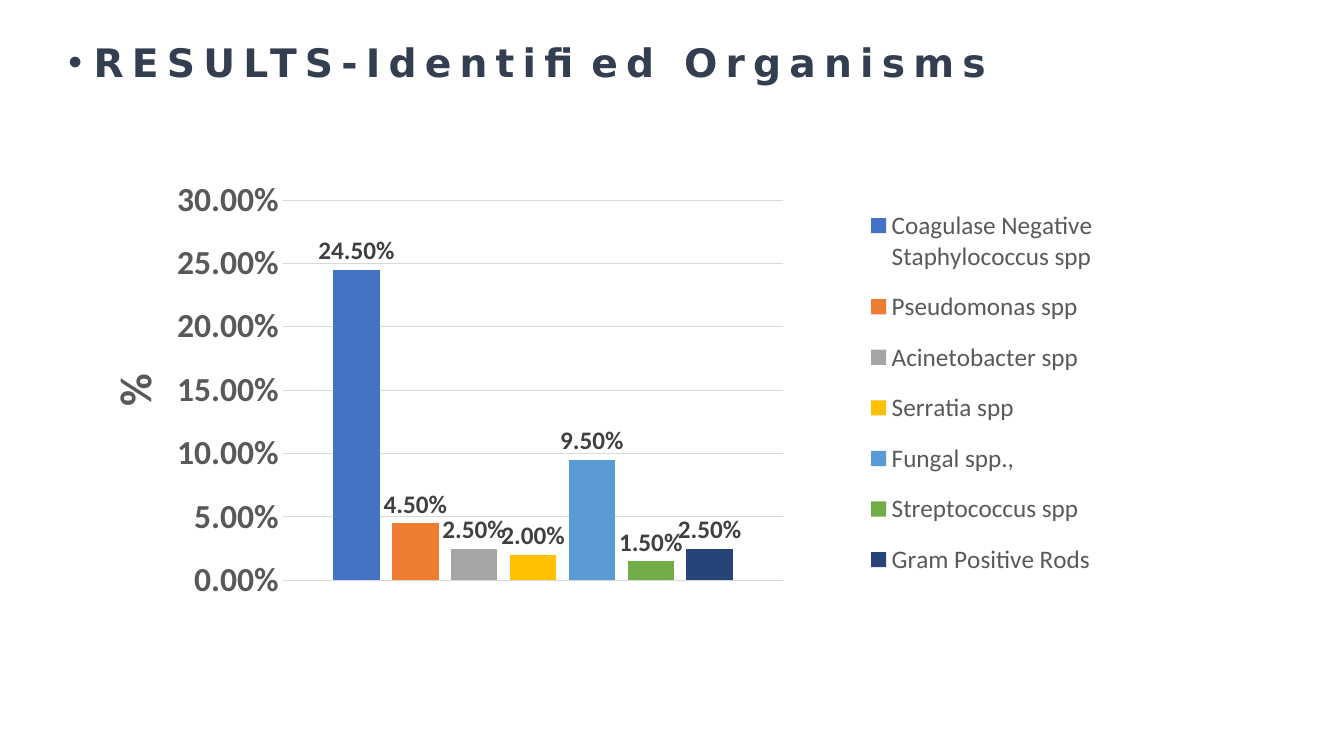
import pptx
import pptx.chart.data
import pptx.dml.color
import pptx.enum.chart
import pptx.enum.text
import pptx.oxml
import pptx.oxml.ns
import pptx.util
from pptx.util import Inches, Pt

RGBColor = pptx.dml.color.RGBColor

HEADING = "RESULTS-Identified Organisms"
AXIS_TITLE = "%"
PERCENT = "0.00%"
ORGANISMS = [
    ("Coagulase Negative Staphylococcus spp", 0.245, RGBColor(0x44, 0x72, 0xC4)),
    ("Pseudomonas spp", 0.045, RGBColor(0xED, 0x7D, 0x31)),
    ("Acinetobacter spp", 0.025, RGBColor(0xA5, 0xA5, 0xA5)),
    ("Serratia spp", 0.02, RGBColor(0xFF, 0xC0, 0x00)),
    ("Fungal spp.,", 0.095, RGBColor(0x5B, 0x9B, 0xD5)),
    ("Streptococcus spp", 0.015, RGBColor(0x70, 0xAD, 0x47)),
    ("Gram Positive Rods", 0.025, RGBColor(0x26, 0x44, 0x78)),
]
NAVY = RGBColor(0x33, 0x3F, 0x50)
TEXT_GREY = RGBColor(0x59, 0x59, 0x59)
LABEL_GREY = RGBColor(0x40, 0x40, 0x40)
GRID_GREY = RGBColor(0xD9, 0xD9, 0xD9)

LEFT_WIDTH = Inches(10.35)
# Left, top, width, height as fractions of the chart
PLOT_AREA = (0.18, 0.14, 0.48, 0.77)
LEGEND_AREA = (0.73, 0.12, 0.24, 0.82)


def set_font(font, size, color, bold=False, name="Calibri"):
    font.name = name
    font.size = Pt(size)
    font.bold = bold
    font.color.rgb = color


def make_layout(area, inner=False):
    """Return a manual chart layout element covering the given fractions."""
    x, y, w, h = area
    target = '<c:layoutTarget val="inner"/>' if inner else ""
    return pptx.oxml.parse_xml(
        f'<c:layout {pptx.oxml.ns.nsdecls("c")}><c:manualLayout>{target}'
        '<c:xMode val="edge"/><c:yMode val="edge"/>'
        f'<c:x val="{x}"/><c:y val="{y}"/><c:w val="{w}"/><c:h val="{h}"/>'
        "</c:manualLayout></c:layout>"
    )


def add_heading(slide):
    box = slide.shapes.add_textbox(Inches(0.58), Inches(0.38), LEFT_WIDTH, Inches(0.73))
    box.text_frame.word_wrap = True
    box.text_frame.vertical_anchor = pptx.enum.text.MSO_ANCHOR.TOP
    paragraph = box.text_frame.paragraphs[0]
    run = paragraph.add_run()
    run.text = HEADING
    run.font._element.set("spc", "590")
    properties = paragraph._p.get_or_add_pPr()
    properties.set("marL", str(Inches(0.25)))
    properties.set("indent", str(-Inches(0.25)))
    for bullet in ('<a:buFont {} typeface="Arial"/>', '<a:buChar {} char="•"/>'):
        properties.append(pptx.oxml.parse_xml(bullet.format(pptx.oxml.ns.nsdecls("a"))))
    paragraph.line_spacing = 0.9
    set_font(paragraph.font, 28, NAVY, True, "DejaVu Sans")


def add_organism_chart(slide):
    data = pptx.chart.data.CategoryChartData(number_format=PERCENT)
    data.categories = ["1"]
    for organism, share, _ in ORGANISMS:
        data.add_series(organism, [share])
    chart = slide.shapes.add_chart(
        pptx.enum.chart.XL_CHART_TYPE.COLUMN_CLUSTERED,
        Inches(0.94), Inches(1.3), LEFT_WIDTH, Inches(4.9), data,
    ).chart
    chart.has_title = False
    set_font(chart.font, 10, RGBColor(0, 0, 0))

    plot = chart.plots[0]
    plot.gap_width = 219
    plot.overlap = -27
    plot.vary_by_categories = False
    for series, (_, _, color) in zip(plot.series, ORGANISMS):
        series.format.fill.solid()
        series.format.fill.fore_color.rgb = color
        labels = series.data_labels
        labels.show_value = True
        labels.position = pptx.enum.chart.XL_LABEL_POSITION.OUTSIDE_END
        labels.number_format = PERCENT
        labels.number_format_is_linked = False
        set_font(labels.font, 18, LABEL_GREY, True)

    chart.category_axis.visible = False
    axis = chart.value_axis
    axis.minimum_scale, axis.maximum_scale, axis.major_unit = 0, 0.3, 0.05
    axis.major_tick_mark = pptx.enum.chart.XL_TICK_MARK.NONE
    axis.format.line.fill.background()
    axis.major_gridlines.format.line.color.rgb = GRID_GREY
    axis.major_gridlines.format.line.width = Pt(0.75)
    axis.tick_labels.number_format = PERCENT
    axis.tick_labels.number_format_is_linked = False
    set_font(axis.tick_labels.font, 24, TEXT_GREY, True)
    title = axis.axis_title.text_frame
    title.text = AXIS_TITLE
    title._txBody.bodyPr.set("rot", "-5400000")
    title._txBody.bodyPr.set("vert", "horz")
    set_font(title.paragraphs[0].font, 32, TEXT_GREY, True)

    chart.has_legend = True
    legend = chart.legend
    legend.position = pptx.enum.chart.XL_LEGEND_POSITION.RIGHT
    legend.include_in_layout = False
    set_font(legend.font, 18, TEXT_GREY)

    plot_area = chart._chartSpace.chart.plotArea
    for parent in (plot_area, legend._element):
        for layout in parent.findall(pptx.oxml.ns.qn("c:layout")):
            parent.remove(layout)
    plot_area.insert(0, make_layout(PLOT_AREA, inner=True))
    legend._element.find(pptx.oxml.ns.qn("c:legendPos")).addnext(make_layout(LEGEND_AREA))


def main():
    deck = pptx.Presentation()
    deck.slide_width, deck.slide_height = Inches(13.33), Inches(7.5)
    slide = deck.slides.add_slide(deck.slide_layouts[6])
    add_heading(slide)
    add_organism_chart(slide)
    deck.save("out.pptx")


if __name__ == "__main__":
    main()
